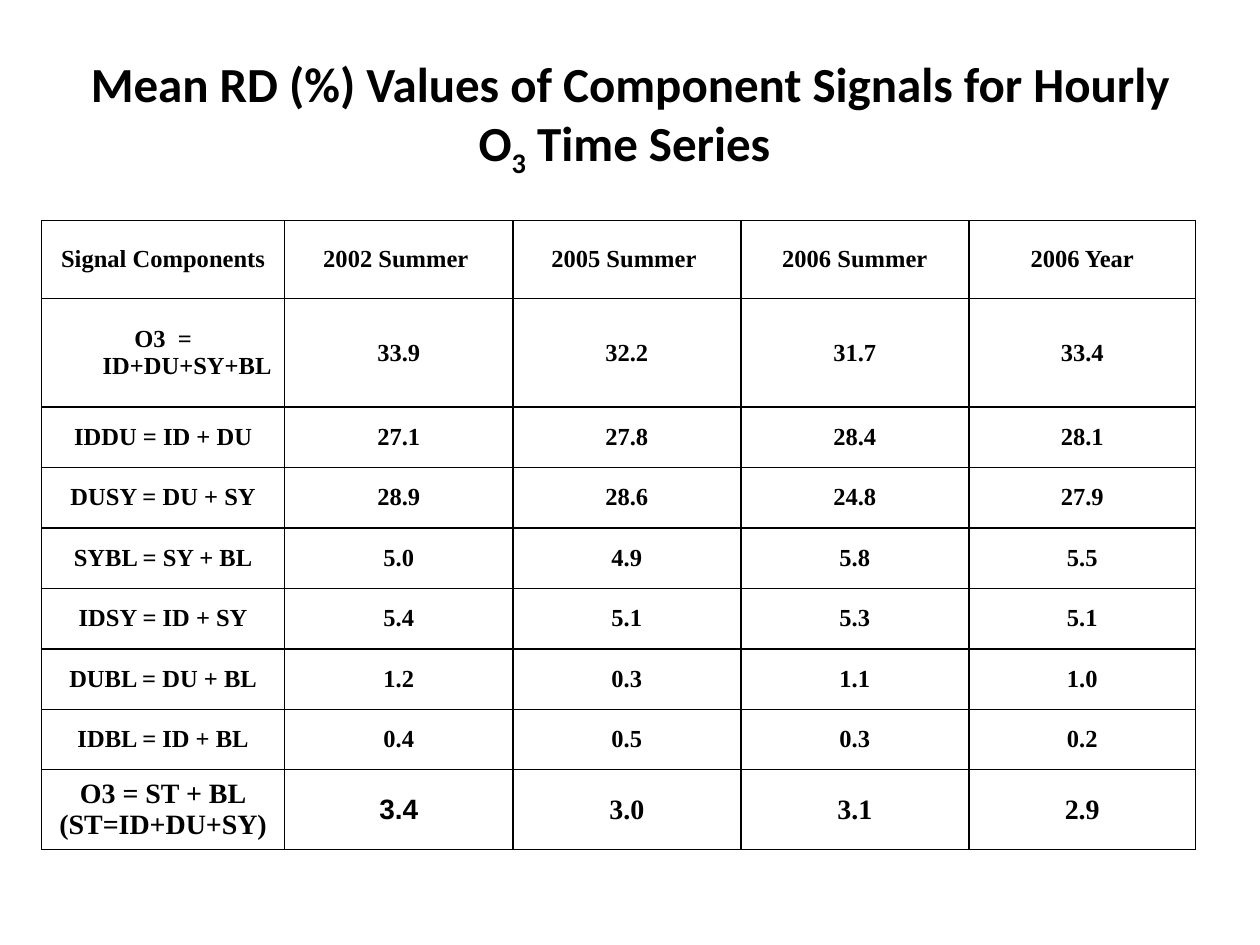
from pptx import Presentation
from pptx.dml.color import RGBColor
from pptx.enum.text import MSO_ANCHOR, PP_ALIGN
from pptx.oxml import parse_xml
from pptx.oxml.ns import nsdecls
from pptx.util import Inches, Pt

BLACK = RGBColor(0, 0, 0)
SERIF = "Times New Roman"

COLS = [1.93, 1.81, 1.81, 1.81, 1.8]
ROWS = [0.62, 0.86] + [0.48] * 6 + [0.59]
DATA = [
    ["Signal Components", "2002 Summer ", "2005 Summer ", "2006 Summer", "2006 Year"],
    ["O3  = ID+DU+SY+BL", "33.9", "32.2", "31.7", "33.4"],
    ["IDDU = ID + DU", "27.1", "27.8", "28.4", "28.1"],
    ["DUSY = DU + SY", "28.9", "28.6", "24.8", "27.9"],
    ["SYBL = SY + BL", "5.0", "4.9", "5.8", "5.5"],
    ["IDSY = ID + SY", "5.4", "5.1", "5.3", "5.1"],
    ["DUBL = DU + BL", "1.2", "0.3", "1.1", "1.0"],
    ["IDBL = ID + BL", "0.4", "0.5", "0.3", "0.2"],
    ["O3 = ST + BL\n(ST=ID+DU+SY)", "3.4", "3.0", "3.1", "2.9"],
]


def add_text(para, text, size=14, font=SERIF, color=BLACK, base=0, hang=0):
    """Add one bold run to a centred paragraph."""
    para.alignment = PP_ALIGN.CENTER
    if hang:
        props = para._p.get_or_add_pPr()
        props.set("marL", str(Inches(hang)))
        props.set("indent", str(-Inches(hang)))
    run = para.add_run()
    run.text = text
    run.font.size = Pt(size)
    run.font.name = font
    run.font.bold = True
    run.font.color.rgb = color
    if base:
        run.font._element.set("baseline", str(base * 1000))


def add_title(slide):
    box = slide.shapes.add_textbox(Inches(0.5), Inches(0.3), Inches(9), Inches(1.25))
    frame = box.text_frame
    frame.word_wrap = True
    frame.vertical_anchor = MSO_ANCHOR.MIDDLE
    parts = [("Mean RD (%) Values of Component Signals for Hourly O", 0),
             ("3", -25), (" Time Series ", 0)]
    for text, base in parts:
        add_text(frame.paragraphs[0], text, size=28, font="Calibri", base=base)


def set_edges(cell, width=1):
    props = cell._tc.get_or_add_tcPr()
    for side in ("lnL", "lnR", "lnT", "lnB"):
        props.append(parse_xml(
            f'<a:{side} {nsdecls("a")} w="{Pt(width)}"><a:solidFill>'
            f'<a:srgbClr val="{BLACK}"/></a:solidFill></a:{side}>'))


def fill_cell(cell, text, **style):
    set_edges(cell)
    cell.fill.background()
    cell.vertical_anchor = MSO_ANCHOR.MIDDLE
    frame = cell.text_frame
    for i, line in enumerate(text.split("\n")):
        para = frame.add_paragraph() if i else frame.paragraphs[0]
        add_text(para, line, hang=0.38, **style)


def add_grid(slide):
    shape = slide.shapes.add_table(len(ROWS), len(COLS), Inches(0.33), Inches(1.75),
                                   Inches(sum(COLS)), Inches(sum(ROWS)))
    table = shape.table
    table.first_row = table.horz_banding = False
    for col, width in zip(table.columns, COLS):
        col.width = Inches(width)
    last = len(ROWS) - 1
    for r, (height, line) in enumerate(zip(ROWS, DATA)):
        table.rows[r].height = Inches(height)
        for c, text in enumerate(line):
            fill_cell(table.cell(r, c), text, size=16 if r == last else 14,
                      font="Arial" if (r, c) == (last, 1) else SERIF)


def main():
    deck = Presentation()
    deck.slide_width, deck.slide_height = Inches(10), Inches(7.5)
    slide = deck.slides.add_slide(deck.slide_layouts[6])
    # Heading
    add_title(slide)
    # Table of mean values
    add_grid(slide)
    deck.save("out.pptx")


if __name__ == "__main__":
    main()
